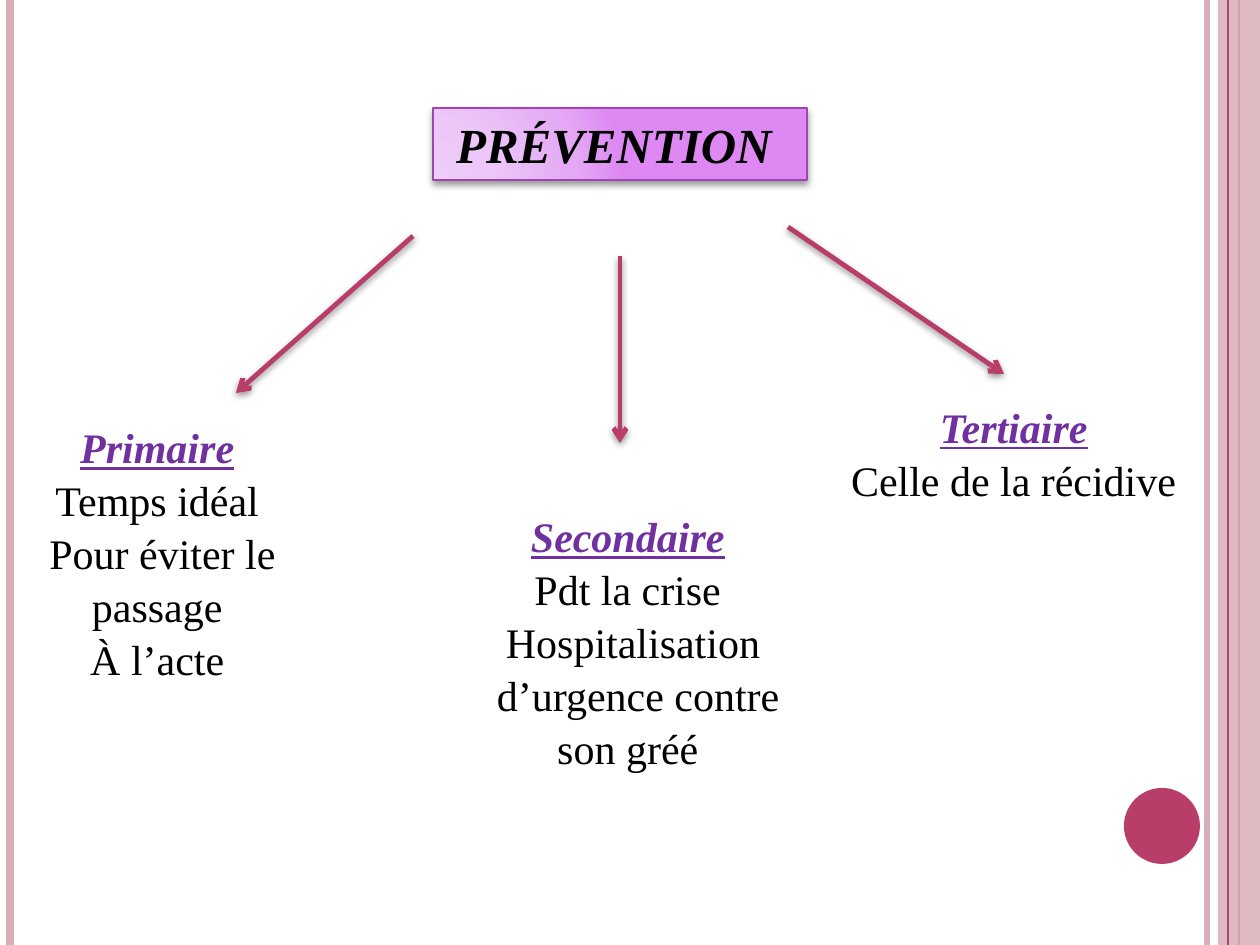
from pptx import Presentation
from pptx.dml.color import RGBColor
from pptx.enum.shapes import MSO_CONNECTOR, MSO_SHAPE
from pptx.enum.text import MSO_ANCHOR, MSO_AUTO_SIZE, PP_ALIGN
from pptx.oxml import parse_xml
from pptx.oxml.ns import nsdecls, qn
from pptx.oxml.xmlchemy import OxmlElement
from pptx.util import Emu, Pt

PX = 914400 / 126
WIDTH, HEIGHT = 1260, 945
FONT = "Times New Roman"
COLORS = {
    "rose": "B83D68",
    "pale": "D8AFB9",
    "heading": "7030A0",
    "text": "000000",
    "border": "9F45B2",
}
TITLE_STOPS = [(0, "EECCF8"), (30, "ECC7F7"), (75, "E4A8F4"), (100, "DD88F3")]


def px(*lengths):
    return [Emu(round(length * PX)) for length in lengths]


def add_line(ends, color, width, shadow=""):
    """Draw a straight line whose effect list holds only the given shadow."""
    line = slide.shapes.add_connector(MSO_CONNECTOR.STRAIGHT, *px(*ends))
    line.line.color.rgb = RGBColor.from_string(COLORS[color])
    line.line.width = Pt(width)
    line.element.spPr.append(
        parse_xml(f"<a:effectLst {nsdecls('a')}>{shadow}</a:effectLst>"))
    return line


SHADOW = ('<a:outerShdw blurRad="50800" dist="{}" dir="5400000" rotWithShape="0">'
          '<a:srgbClr val="000000"><a:alpha val="{}"/></a:srgbClr></a:outerShdw>')

deck = Presentation()
deck.slide_width, deck.slide_height = px(WIDTH, HEIGHT)
slide = deck.slides.add_slide(deck.slide_layouts[5])

# Side stripes and page dot
for x, color, width in [(1207, "pale", 3), (10, "pale", 4.5), (1239, "rose", 1.5)]:
    add_line((x, 0, x, HEIGHT), color, width)

band = slide.shapes.add_shape(MSO_SHAPE.RECTANGLE, *px(1218, 0, 42, HEIGHT))
dot = slide.shapes.add_shape(MSO_SHAPE.OVAL, *px(1124, 788, 76, 76))
for shape, color in [(band, "pale"), (dot, "rose")]:
    shape.shadow.inherit = False
    shape.fill.solid()
    shape.fill.fore_color.rgb = RGBColor.from_string(COLORS[color])
    shape.line.fill.background()
alpha = OxmlElement("a:alpha")
alpha.set("val", "87000")
band.element.spPr.find(qn("a:solidFill"))[0].append(alpha)

add_line((1228, 0, 1228, HEIGHT), "rose", 0.75)

# Title
title = slide.shapes.title
title.left, title.top, title.width, title.height = px(433, 108, 374, 72)
title.fill.gradient()
stops = "".join(f'<a:gs pos="{position * 1000}"><a:srgbClr val="{color}"/></a:gs>'
                for position, color in TITLE_STOPS)
properties = title.element.spPr
properties.replace(properties.find(qn("a:gradFill")), parse_xml(
    f'<a:gradFill {nsdecls("a")} rotWithShape="1"><a:gsLst>{stops}</a:gsLst>'
    '<a:path path="circle"><a:fillToRect l="5000" t="100000" r="120000" b="10000"/>'
    '</a:path></a:gradFill>'))
title.line.color.rgb = RGBColor.from_string(COLORS["border"])
title.line.width = Pt(1)
properties.append(parse_xml(
    f"<a:effectLst {nsdecls('a')}>{SHADOW.format(25400, 40000)}</a:effectLst>"))
frame = title.text_frame
frame.text = "PRÉVENTION "
frame.word_wrap = True
frame.auto_size = MSO_AUTO_SIZE.NONE
frame.vertical_anchor = MSO_ANCHOR.MIDDLE
frame.paragraphs[0].alignment = PP_ALIGN.CENTER
font = frame.paragraphs[0].runs[0].font
font.name, font.size, font.bold, font.italic = FONT, Pt(28), True, True
font.color.rgb = RGBColor.from_string(COLORS["text"])

# Arrows from the title to the three levels
for ends in [(413, 236, 236, 393), (620, 256, 620, 443), (788, 227, 1004, 374)]:
    arrow = add_line(ends, "rose", 2.75, SHADOW.format(20320, 42000))
    head = OxmlElement("a:tailEnd")
    head.set("type", "arrow")
    arrow.element.spPr.find(qn("a:ln")).append(head)

# Levels of prevention: box, wrapping, heading, lines
levels = [
    ((0, 413, 325, 267), True, "Primaire",
     ["Temps idéal ", "Pour éviter le passage ", "À l’acte "]),
    ((472, 502, 322, 267), False, "Secondaire",
     ["Pdt la crise ", "Hospitalisation", " d’urgence contre", "son gréé "]),
    ((837, 393, 364, 115), False, "Tertiaire", ["Celle de la récidive "]),
]
for place, wrap, heading, lines in levels:
    box = slide.shapes.add_textbox(*px(*place))
    frame = box.text_frame
    frame.word_wrap = wrap
    frame.text = "\n".join([heading, *lines])
    frame.paragraphs[0].add_run().text = " "
    for para in frame.paragraphs:
        para.alignment = PP_ALIGN.CENTER
        para.line_spacing = 1.05
        for span in para.runs:
            span.font.name, span.font.size = FONT, Pt(24)
            span.font.color.rgb = RGBColor.from_string(COLORS["text"])
    font = frame.paragraphs[0].runs[0].font
    font.bold = font.italic = font.underline = True
    font.color.rgb = RGBColor.from_string(COLORS["heading"])

deck.save("out.pptx")
